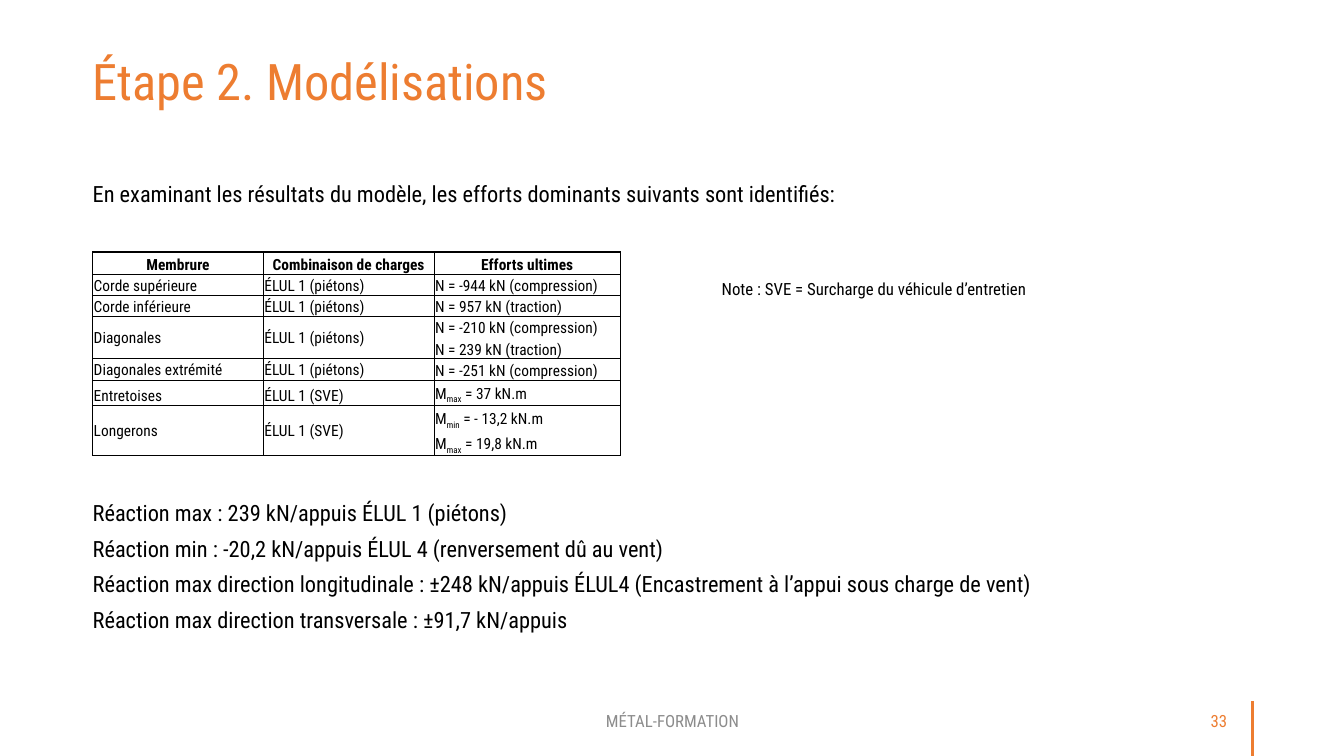
import dataclasses

import lxml.etree
import pptx
import pptx.dml.color
import pptx.enum.shapes
import pptx.enum.text
import pptx.oxml.ns
import pptx.util

PP = pptx.enum.text.PP_ALIGN
MSO = pptx.enum.text.MSO_ANCHOR
FONT = "Roboto Condensed"
BLACK, ORANGE, GRAY = "000000", "ED7D31", "8C8C8C"
WIDTH, HEIGHT = pptx.util.Inches(13.33), pptx.util.Inches(7.5)
THIN, THICK = 0.5, 1
MARGIN = 6.9
FOOTER_TOP = 92.67


@dataclasses.dataclass
class Run:
    text: str
    subscript: bool = False


@dataclasses.dataclass
class TextBlock:
    left: float
    top: float
    width: float
    height: float
    lines: list[str]
    size: float
    color: str = BLACK
    align: PP = PP.LEFT
    anchor: MSO = MSO.TOP
    spacing: float = 1
    before: float = 0
    inset: bool = True


@dataclasses.dataclass
class Member:
    name: str
    load: str
    efforts: list[list[Run]]
    heights: list[float]
    anchor: MSO = MSO.MIDDLE


def moment(kind: str, value: str) -> list[Run]:
    return [Run("M"), Run(kind, True), Run(f" = {value} kN.m")]


def axial(value: str) -> list[Run]:
    return [Run(f"N = {value}")]


PEDESTRIANS, VEHICLE = "ÉLUL 1 (piétons)", "ÉLUL 1 (SVE)"
HEADINGS = ["Membrure", "Combinaison de charges", "Efforts ultimes"]
HEADING_HEIGHT = 2.93
COLUMNS = [12.7, 12.7, 13.88]
MEMBERS = [
    Member("Corde supérieure", PEDESTRIANS, [axial("-944 kN (compression)")], [2.8], MSO.BOTTOM),
    Member("Corde inférieure", PEDESTRIANS, [axial("957 kN (traction)")], [2.8], MSO.BOTTOM),
    Member("Diagonales", PEDESTRIANS,
           [axial("-210 kN (compression)"), axial("239 kN (traction)")], [2.8, 2.8]),
    Member("Diagonales extrémité", PEDESTRIANS, [axial("-251 kN (compression)")], [2.8]),
    Member("Entretoises", VEHICLE, [moment("max", "37")], [3.33], MSO.BOTTOM),
    Member("Longerons", VEHICLE,
           [moment("min", "- 13,2"), moment("max", "19,8")], [3.33, 3.4]),
]
BLOCKS = [
    TextBlock(33.16, FOOTER_TOP, 33.76, 5.33, ["MÉTAL-FORMATION"], 12, GRAY, PP.CENTER, MSO.MIDDLE),
    TextBlock(82.15, FOOTER_TOP, 9.9, 5.33, ["33"], 12, ORANGE, PP.RIGHT, MSO.MIDDLE),
    TextBlock(MARGIN, 7.53, 80.57, 13.47, ["Étape 2. Modélisations"], 36, ORANGE,
              spacing=0.9, inset=False),
    TextBlock(MARGIN, 24.53, 86.27, 4, [
        "En examinant les résultats du modèle, les efforts dominants suivants sont identifiés:",
    ], 16, spacing=0.8, inset=False),
    TextBlock(MARGIN, 66.73, 86.27, 21.33, [
        "Réaction max : 239 kN/appuis ÉLUL 1 (piétons)",
        "Réaction min : -20,2 kN/appuis ÉLUL 4 (renversement dû au vent)",
        "Réaction max direction longitudinale : ±248 kN/appuis ÉLUL4 "
        "(Encastrement à l’appui sous charge de vent)",
        "Réaction max direction transversale : ±91,7 kN/appuis",
    ], 16, spacing=0.8, before=10, inset=False),
    TextBlock(52.96, 36.2, 30.16, 4, ["Note : SVE = Surcharge du véhicule d’entretien"], 12),
]


def across(share: float) -> int:
    return round(WIDTH * share / 100)


def down(share: float) -> int:
    return round(HEIGHT * share / 100)


def rgb(value: str) -> pptx.dml.color.RGBColor:
    return pptx.dml.color.RGBColor.from_string(value)


def add_run(p, run: Run, size: float, color: str, bold: bool = False) -> None:
    r = p.add_run()
    r.text = run.text
    r.font.name = FONT
    r.font.size = pptx.util.Pt(size)
    r.font.bold = bold
    r.font.color.rgb = rgb(color)
    if run.subscript:
        r._r.get_or_add_rPr().set("baseline", "-25000")


def add_block(s, block: TextBlock) -> None:
    sp = s.shapes.add_textbox(across(block.left), down(block.top),
                              across(block.width), down(block.height))
    tf = sp.text_frame
    tf.word_wrap = True
    tf.vertical_anchor = block.anchor
    if not block.inset:
        tf.margin_left = tf.margin_top = tf.margin_right = tf.margin_bottom = 0
    for i, line in enumerate(block.lines):
        p = tf.add_paragraph() if i else tf.paragraphs[0]
        p.alignment = block.align
        p.line_spacing = block.spacing
        if i:
            p.space_before = pptx.util.Pt(block.before)
        add_run(p, Run(line), block.size, block.color)


def add_border(cell, side: str, weight: float) -> None:
    qn = pptx.oxml.ns.qn
    ln = lxml.etree.SubElement(cell._tc.get_or_add_tcPr(), qn(f"a:ln{side}"))
    if not weight:
        lxml.etree.SubElement(ln, qn("a:noFill"))
        return
    ln.set("w", str(pptx.util.Pt(weight)))
    fill = lxml.etree.SubElement(ln, qn("a:solidFill"))
    lxml.etree.SubElement(fill, qn("a:srgbClr")).set("val", BLACK)


def fill_cell(cell, runs: list[Run], anchor: MSO, heading: bool = False) -> None:
    cell.vertical_anchor = anchor
    p = cell.text_frame.paragraphs[0]
    p.alignment = PP.CENTER if heading else PP.LEFT
    for run in runs:
        add_run(p, run, 11, BLACK, heading)


def add_efforts_table(s) -> None:
    heights = [HEADING_HEIGHT] + [h for member in MEMBERS for h in member.heights]
    rows, last = len(heights), len(COLUMNS) - 1
    table = s.shapes.add_table(rows, len(COLUMNS), across(MARGIN), down(33.33),
                               across(sum(COLUMNS)), down(sum(heights))).table
    table.first_row = table.horz_banding = False
    for column, width in zip(table.columns, COLUMNS):
        column.width = across(width)
    for row, height in zip(table.rows, heights):
        row.height = down(height)

    edges = {0: THICK, 1: THICK, rows: THICK}
    for c, heading in enumerate(HEADINGS):
        fill_cell(table.cell(0, c), [Run(heading)], MSO.BOTTOM, True)
    top = 1
    for member in MEMBERS:
        bottom = top + len(member.efforts) - 1
        for c, text in enumerate([member.name, member.load]):
            if bottom > top:
                table.cell(top, c).merge(table.cell(bottom, c))
            fill_cell(table.cell(top, c), [Run(text)], member.anchor)
        for r, effort in enumerate(member.efforts, top):
            fill_cell(table.cell(r, last), effort, MSO.BOTTOM)
            edges.setdefault(r, THIN if r == top else 0)
        top = bottom + 1

    for r in range(rows):
        for c in range(len(COLUMNS)):
            cell = table.cell(r, c)
            cell.margin_left = cell.margin_top = cell.margin_right = pptx.util.Inches(0.01)
            cell.margin_bottom = 0
            end = r + cell.span_height if cell.is_merge_origin else r + 1
            add_border(cell, "L", THIN if c else THICK)
            add_border(cell, "R", THICK if c == last else THIN)
            add_border(cell, "T", edges[r])
            add_border(cell, "B", edges[end])
            cell.fill.background()


def add_footer_rule(s) -> None:
    x = across(93.17)
    line = s.shapes.add_connector(pptx.enum.shapes.MSO_CONNECTOR.STRAIGHT,
                                  x, HEIGHT, x, down(FOOTER_TOP))
    line.line.color.rgb = rgb(ORANGE)
    line.line.width = pptx.util.Pt(2.25)
    lxml.etree.SubElement(line._element.spPr, pptx.oxml.ns.qn("a:effectLst"))


def main() -> None:
    prs = pptx.Presentation()
    prs.slide_width, prs.slide_height = WIDTH, HEIGHT
    s = prs.slides.add_slide(prs.slide_layouts[6])
    add_footer_rule(s)
    for block in BLOCKS:
        add_block(s, block)
    add_efforts_table(s)
    prs.save("out.pptx")


if __name__ == "__main__":
    main()
